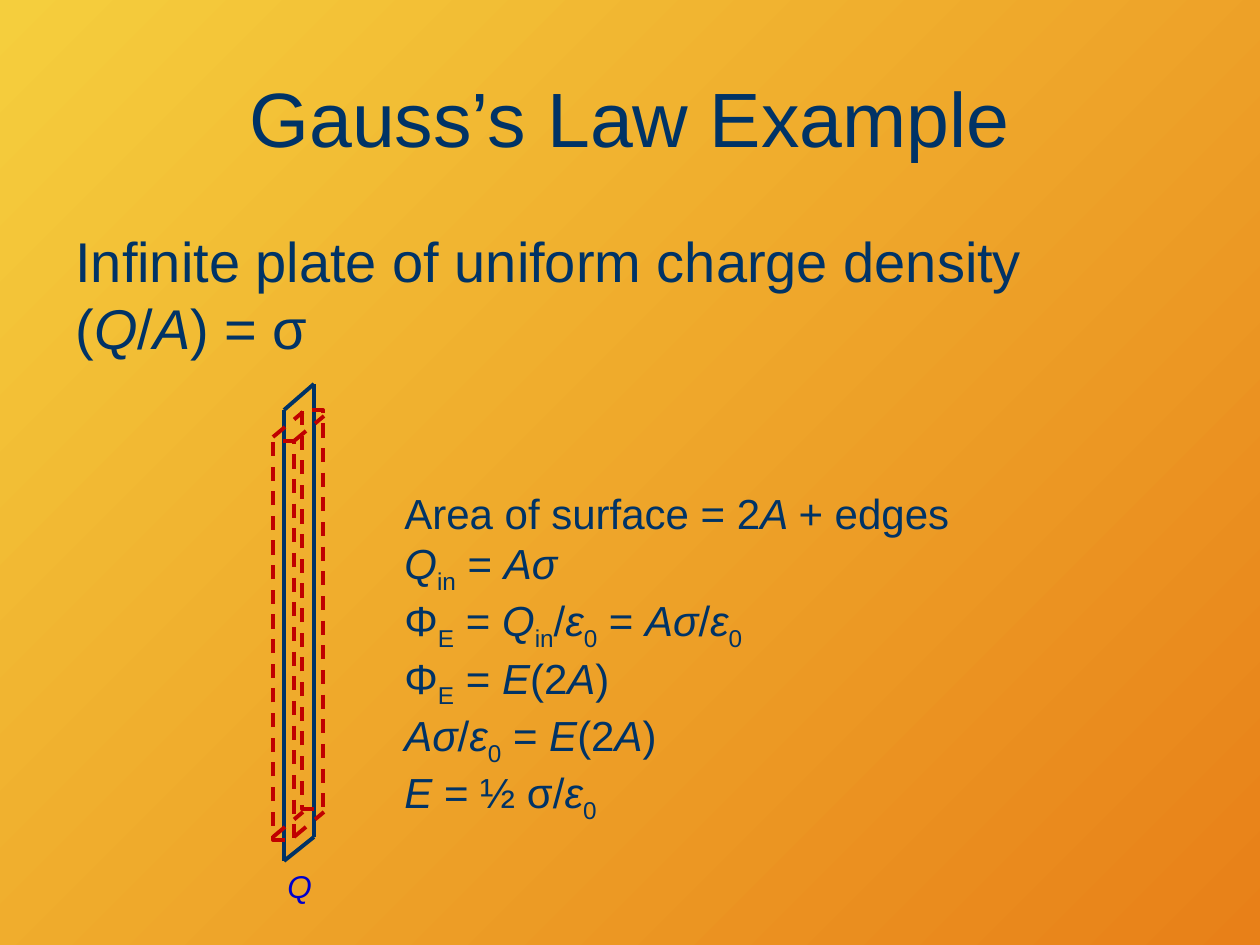
from dataclasses import dataclass

from lxml import etree
from pptx import Presentation
from pptx import util as u
from pptx.dml.color import RGBColor
from pptx.enum import dml, shapes, text
from pptx.oxml.ns import qn


@dataclass(frozen=True)
class Theme:
    font: str = "Arial"
    navy: RGBColor = RGBColor.from_string("003366")
    red: RGBColor = RGBColor.from_string("C00000")
    blue: RGBColor = RGBColor.from_string("0000CC")
    background: tuple = ("F5CE3D", "E88018")
    title: int = 44
    body: int = 32
    formula: int = 24
    label: int = 18


theme = Theme()
SCALE = 914400 / 126  # EMU per px


def add_text(box, paragraphs, size, color, wrap=True):
    """Add a text box; each paragraph is a list of (text, style) runs, style being "", "i" or "sub"."""
    frame = slide.shapes.add_textbox(*[round(n * SCALE) for n in box]).text_frame
    frame.word_wrap = wrap
    for index, runs in enumerate(paragraphs):
        paragraph = frame.paragraphs[0] if index == 0 else frame.add_paragraph()
        for content, style in runs:
            if content == "\n":
                paragraph.add_line_break()
                continue
            run = paragraph.add_run()
            run.text = content
            run.font.name = theme.font
            run.font.size = u.Pt(size)
            run.font.color.rgb = color
            run.font.italic = style == "i"
            if style == "sub":
                run.font._element.set("baseline", "-25000")
    return frame


def add_line(start, end, color, dashed=False):
    points = [round(n * SCALE) for n in (*start, *end)]
    line = slide.shapes.add_connector(shapes.MSO_CONNECTOR.STRAIGHT, *points)
    line.line.color.rgb = color
    line.line.width = u.Pt(2.25)
    if dashed:
        line.line.dash_style = dml.MSO_LINE.DASH
    etree.SubElement(line._element.spPr, qn("a:effectLst"))


presentation = Presentation()
presentation.slide_width = round(1260 * SCALE)
presentation.slide_height = round(945 * SCALE)
slide = presentation.slides.add_slide(presentation.slide_layouts[6])

fill = slide.background.fill
fill.gradient()
fill.gradient_angle = 315
for stop, color in zip(fill.gradient_stops, theme.background):
    stop.color.rgb = RGBColor.from_string(color)

# Heading and statement
title = add_text((63, 38, 1134, 158), [[("Gauss’s Law Example", "")]], theme.title, theme.navy)
title.vertical_anchor = text.MSO_ANCHOR.MIDDLE
title.paragraphs[0].alignment = text.PP_ALIGN.CENTER

Q, A, E = ("Q", "i"), ("A", "i"), ("E", "i")
equals, slash = (" = ", ""), ("/", "")
statement = [("Infinite plate of uniform charge density ", ""), ("\n", ""),
             ("(", ""), Q, slash, A, (") = σ", "")]
body = add_text((63, 220, 1134, 168), [statement], theme.body, theme.navy)
body.paragraphs[0].space_before = u.Pt(6.4)

# Charged plate
near_top, near_bottom = (284, 410), (284, 861)
far_top, far_bottom = (314, 384), (314, 837)
for start, end in ((near_top, near_bottom), (far_top, far_bottom),
                   (near_top, far_top), (near_bottom, far_bottom)):
    add_line(start, end, theme.navy)

# Gaussian surface around the plate
for left, top in ((273, 441), (302, 410)):
    face = slide.shapes.add_shape(shapes.MSO_SHAPE.RECTANGLE,
                                  *[round(n * SCALE) for n in (left, top, 21, 399)])
    face.shadow.inherit = False
    face.fill.background()
    face.line.color.rgb = theme.red
    face.line.width = u.Pt(2)
    face.line.dash_style = dml.MSO_LINE.DASH
for x, y in ((294, 837), (294, 441), (273, 437), (273, 837)):
    add_line((x, y), (x + 30, y - 25), theme.red, dashed=True)

# Derivation
charge_in = [Q, ("in", "sub")]
flux = [("Φ", ""), ("E", "sub"), equals]
sigma_area = ("Aσ", "i")
epsilon = [("ε", "i"), ("0", "sub")]
field_flux = [E, ("(2", ""), A, (")", "")]
derivation = [
    [("Area of surface = 2", ""), ("A ", "i"), ("+ edges", "")],
    [*charge_in, equals, sigma_area],
    [*flux, *charge_in, slash, *epsilon, equals, sigma_area, slash, *epsilon],
    [*flux, *field_flux],
    [sigma_area, slash, *epsilon, equals, *field_flux],
    [E, (" = ½ σ/", ""), *epsilon],
]
add_text((392, 481, 659, 318), derivation, theme.formula, theme.navy)
add_text((275, 861, 50, 50), [[Q]], theme.label, theme.blue, wrap=False)

presentation.save("out.pptx")
